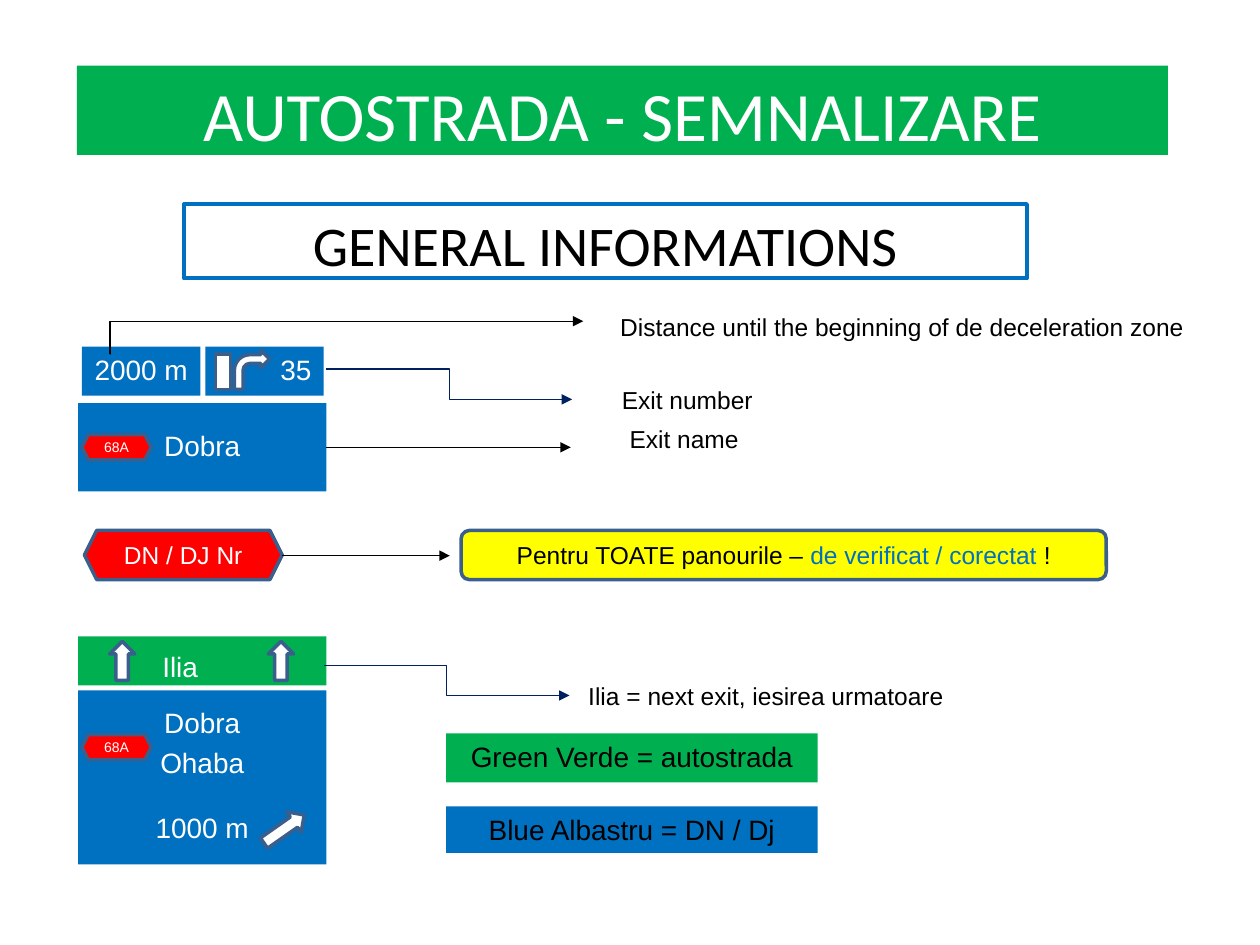
"""Build a slide that explains the parts of motorway exit signs."""
from dataclasses import dataclass

from lxml import etree
from pptx import Presentation
from pptx import util as u
from pptx.dml.color import RGBColor
from pptx.enum import shapes, text
from pptx.oxml import ns
from pptx.slide import Slide

GREEN = RGBColor(0x00, 0xB0, 0x50)
BLUE = RGBColor(0x00, 0x70, 0xC0)
NAVY = RGBColor(0x00, 0x20, 0x60)
RED = RGBColor(0xFF, 0x00, 0x00)
YELLOW = RGBColor(0xFF, 0xFF, 0x00)
OUTLINE = RGBColor(0x3A, 0x5F, 0x8C)
WHITE = RGBColor(0xFF, 0xFF, 0xFF)
BLACK = RGBColor(0x00, 0x00, 0x00)

KIND = shapes.MSO_SHAPE
TOP, MIDDLE = text.MSO_ANCHOR.TOP, text.MSO_ANCHOR.MIDDLE
LEFT, CENTER, RIGHT = text.PP_ALIGN.LEFT, text.PP_ALIGN.CENTER, text.PP_ALIGN.RIGHT
MARGINS = (0.1, 0.05, 0.1, 0.05)
PANEL_MARGINS = (0.1, 0.2, 0.1, 0.24)


@dataclass
class SignSlide:
    """Style and current slide, with one method per kind of element."""

    slide: Slide
    font: str = "Arial"
    outline_width: float = 2

    def shape(self, kind, box, fill=None, line=None, width=None, rotation=0, adjust=()):
        """Add a preset shape with a flat fill and an optional outline."""
        shape = self.slide.shapes.add_shape(kind, *map(u.Inches, box))
        shape.shadow.inherit = False
        shape.rotation = rotation
        for index, value in enumerate(adjust):
            shape.adjustments[index] = value
        if fill is None:
            shape.fill.background()
        else:
            shape.fill.solid()
            shape.fill.fore_color.rgb = fill
        if line is None:
            shape.line.fill.background()
        else:
            shape.line.color.rgb = line
            shape.line.width = u.Pt(width or self.outline_width)
        return shape

    def letter(self, shape, paragraphs, size, color=WHITE, align=CENTER, anchor=MIDDLE,
               margins=MARGINS, font=None):
        """Fill a shape with paragraphs given as (space before, [(words, colour), ...])."""
        frame = shape.text_frame
        frame.word_wrap = True
        frame.vertical_anchor = anchor
        (frame.margin_left, frame.margin_top,
         frame.margin_right, frame.margin_bottom) = map(u.Inches, margins)
        for index, (space, runs) in enumerate(paragraphs):
            paragraph = frame.add_paragraph() if index else frame.paragraphs[0]
            paragraph.alignment = align
            paragraph.space_before = u.Pt(space)
            for words, run_color in runs:
                run = paragraph.add_run()
                run.text = words
                run.font.name = font or self.font
                run.font.size = u.Pt(size)
                run.font.color.rgb = run_color or color
        return shape

    def panel(self, words, box, fill, size=16, line=None, width=None, **style):
        """Add a rectangle holding one line of text."""
        shape = self.shape(KIND.RECTANGLE, box, fill, line, width)
        return self.letter(shape, [(0, [(words, None)])], size, **style)

    def label(self, words, box, align=CENTER):
        """Add a white caption for a part of a sign."""
        return self.panel(words, box, WHITE, 14, WHITE, color=BLACK, align=align)

    def badge(self, words, box, size):
        """Add a red road-number hexagon."""
        shape = self.shape(KIND.HEXAGON, box, RED, OUTLINE)
        return self.letter(shape, [(0, [(words, None)])], size, margins=(0, 0, 0, 0))

    def symbol(self, kind, box, **options):
        """Add a white road symbol."""
        return self.shape(kind, box, WHITE, OUTLINE, **options)

    def arrow(self, start, end, color=BLACK, elbow=False, bend=None, source=None):
        """Add a straight or elbow connector with an arrowhead."""
        kind = shapes.MSO_CONNECTOR.ELBOW if elbow else shapes.MSO_CONNECTOR.STRAIGHT
        connector = self.slide.shapes.add_connector(kind, *map(u.Inches, start + end))
        if source is not None:
            connector.begin_connect(source, 3)
        connector.line.color.rgb = color
        connector.line.width = u.Pt(0.75)
        properties = connector._element.spPr
        etree.SubElement(properties.get_or_add_ln(), ns.qn("a:tailEnd"), type="triangle")
        etree.SubElement(properties, ns.qn("a:effectLst"))
        if bend is not None:
            guides = properties.find(ns.qn("a:prstGeom")).get_or_add_avLst()
            etree.SubElement(guides, ns.qn("a:gd"), name="adj1", fmla=f"val {bend}")


def main():
    """Draw the slide and save it."""
    deck = Presentation()
    deck.slide_width, deck.slide_height = u.Inches(10), u.Inches(7.5)
    sign = SignSlide(deck.slides.add_slide(deck.slide_layouts[6]))

    sign.panel("AUTOSTRADA - SEMNALIZARE", (0.61, 0.52, 8.66, 0.71), GREEN, 39.6,
               font="Calibri", anchor=TOP)
    sign.panel("GENERAL INFORMATIONS", (1.46, 1.62, 6.69, 0.59), None, 32, BLUE, 2.25,
               color=BLACK, font="Calibri", anchor=TOP)

    sign.panel("35", (1.63, 2.75, 0.94, 0.39), BLUE, align=RIGHT, anchor=TOP)
    exit_name = sign.panel("Dobra", (0.62, 3.2, 1.97, 0.7), BLUE, anchor=TOP,
                           margins=PANEL_MARGINS)
    sign.label("Exit number", (4.63, 3.03, 1.65, 0.29))
    sign.label("Exit name", (4.78, 3.34, 1.3, 0.29))
    sign.label("Distance until the beginning of de deceleration zone", (4.8, 2.42, 4.72, 0.34))

    sign.badge("DN / DJ Nr", (0.67, 4.21, 1.57, 0.39), 14)
    notice = sign.shape(KIND.ROUNDED_RECTANGLE, (3.66, 4.21, 5.12, 0.39), YELLOW, OUTLINE)
    sign.letter(notice, [(0, [("Pentru TOATE panourile – ", None),
                              ("de verificat / corectat ", BLUE), ("!", None)])], 14, BLACK)

    sign.panel("Ilia", (0.62, 5.05, 1.97, 0.39), GREEN, margins=(0, 0.09, 0.35, 0.01))
    directions = sign.shape(KIND.RECTANGLE, (0.62, 5.48, 1.97, 1.38), BLUE)
    sign.letter(directions, [(0, [("Dobra", None)]), (3.7, [("Ohaba", None)]),
                             (18, [("1000 m", None)])], 16, margins=PANEL_MARGINS)
    for left in (0.87, 2.13):
        sign.symbol(KIND.UP_ARROW, (left, 5.09, 0.2, 0.31))
    for top in (3.45, 5.83):
        sign.badge("68A", (0.65, top, 0.55, 0.2), 8)
    sign.symbol(KIND.RIGHT_ARROW, (2.06, 6.48, 0.39, 0.2), rotation=325)

    sign.label("Ilia = next exit, iesirea urmatoare", (4.57, 5.38, 4.21, 0.29), LEFT)
    sign.panel("Green Verde = autostrada", (3.54, 5.82, 2.95, 0.39), GREEN,
               color=BLACK, anchor=TOP)
    sign.panel("Blue Albastru = DN / Dj", (3.54, 6.4, 2.95, 0.37), BLUE,
               color=BLACK, anchor=TOP)

    sign.panel("2000 m", (0.65, 2.75, 0.94, 0.39), BLUE, anchor=TOP)
    sign.symbol(KIND.RECTANGLE, (1.71, 2.81, 0.12, 0.28))
    sign.symbol(KIND.BENT_ARROW, (1.86, 2.78, 0.28, 0.31), adjust=(0.25, 0.25, 0.25, 0.44))

    sign.arrow((2.59, 2.93), (4.54, 3.17), NAVY, elbow=True)
    sign.arrow((2.59, 3.55), (4.53, 3.55), source=exit_name)
    sign.arrow((2.24, 4.41), (3.57, 4.41))
    sign.arrow((2.57, 5.28), (4.52, 5.52), NAVY, elbow=True)
    sign.arrow((0.87, 2.81), (4.63, 2.55), elbow=True, bend=100)

    deck.save("out.pptx")


if __name__ == "__main__":
    main()
